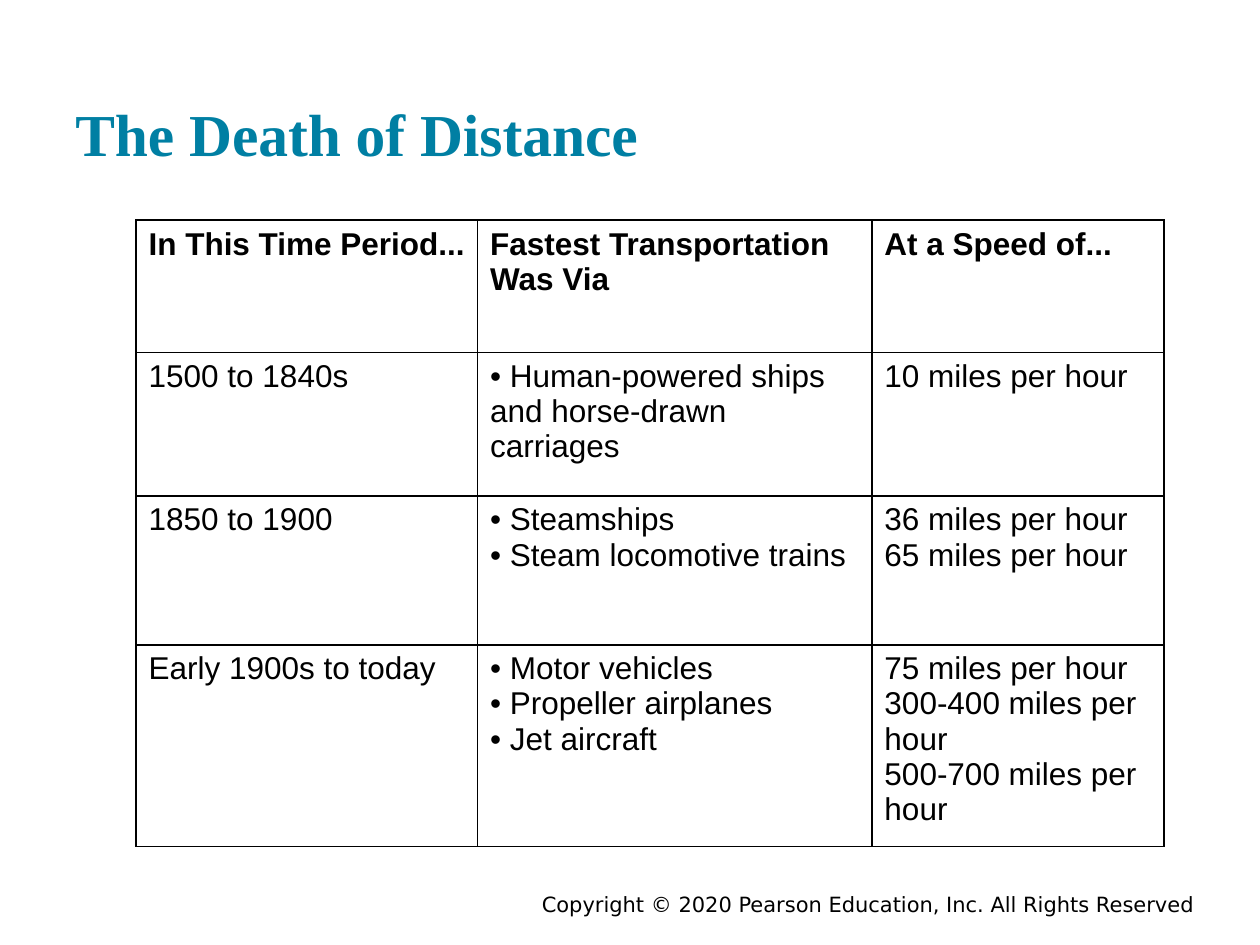
from dataclasses import dataclass

from lxml.etree import SubElement
from pptx import Presentation
from pptx.dml.color import RGBColor
from pptx.enum.text import MSO_ANCHOR, PP_ALIGN
from pptx.oxml.ns import qn
from pptx.util import Inches, Pt


@dataclass(frozen=True)
class Theme:
    """Colours, fonts and type sizes of the slide."""
    ink: str = "000000"
    accent: str = "007FA3"
    paper: str = "FFFFFF"
    title_font: str = "Times New Roman"
    body_font: str = "Arial"
    footer_font: str = "DejaVu Sans"
    title_size: int = 34
    body_size: int = 18
    footer_size: int = 12
    rule_width: int = 1


THEME = Theme()
WIDTH, HEIGHT = 10, 7.5
COLUMNS = (2.71, 3.13, 2.32)
ROWS = (1.05, 1.14, 1.18, 1.5)
ERAS = (
    (("In This Time Period...",), ("Fastest Transportation Was Via",), ("At a Speed of...",)),
    (("1500 to 1840s",), ("• Human-powered ships and horse-drawn carriages",),
     ("10 miles per hour",)),
    (("1850 to 1900",), ("• Steamships", "• Steam locomotive trains"),
     ("36 miles per hour", "65 miles per hour")),
    (("Early 1900s to today",),
     ("• Motor vehicles", "• Propeller airplanes", "• Jet aircraft"),
     ("75 miles per hour", "300-400 miles per hour", "500-700 miles per hour")),
)


def write(frame, lines, *, font=THEME.body_font, size=THEME.body_size,
          color=THEME.ink, bold=False, align=PP_ALIGN.LEFT):
    """Fill a text frame with one paragraph per line in a single format."""
    frame.word_wrap = True
    for index, line in enumerate(lines):
        paragraph = frame.paragraphs[0] if index == 0 else frame.add_paragraph()
        paragraph.alignment = align
        run = paragraph.add_run()
        run.text = line
        run.font.name = font
        run.font.size = Pt(size)
        run.font.bold = bold
        run.font.color.rgb = RGBColor.from_string(color)


def add_label(slide, line, left, top, width, height, *, inset=0.05,
              anchor=MSO_ANCHOR.TOP, **style):
    """Place a text box given as shares of the slide's size."""
    box = slide.shapes.add_textbox(Inches(left * WIDTH), Inches(top * HEIGHT),
                                   Inches(width * WIDTH), Inches(height * HEIGHT))
    frame = box.text_frame
    frame.vertical_anchor = anchor
    frame.margin_top = frame.margin_bottom = Inches(inset)
    write(frame, (line,), **style)


def rule_cell(cell):
    """Draw a thin rule on all four sides of a cell."""
    properties = cell._tc.get_or_add_tcPr()
    for side in ("lnL", "lnR", "lnT", "lnB"):
        rule = SubElement(properties, qn(f"a:{side}"), w=str(Pt(THEME.rule_width)))
        fill = SubElement(rule, qn("a:solidFill"))
        SubElement(fill, qn("a:srgbClr"), val=THEME.ink)


def add_era_table(slide, left, top):
    """Add the table of periods, transport and speeds."""
    table = slide.shapes.add_table(
        len(ROWS), len(COLUMNS), Inches(left * WIDTH), Inches(top * HEIGHT),
        Inches(sum(COLUMNS)), Inches(sum(ROWS))).table
    table.first_row = table.horz_banding = False
    for column, width in zip(table.columns, COLUMNS):
        column.width = Inches(width)
    for row_index, (row, height, era) in enumerate(zip(table.rows, ROWS, ERAS)):
        row.height = Inches(height)
        for cell, lines in zip(row.cells, era):
            rule_cell(cell)
            cell.fill.solid()
            cell.fill.fore_color.rgb = RGBColor.from_string(THEME.paper)
            write(cell.text_frame, lines, bold=row_index == 0)


def main():
    """Build and save the slide."""
    deck = Presentation()
    deck.slide_width, deck.slide_height = Inches(WIDTH), Inches(HEIGHT)
    slide = deck.slides.add_slide(deck.slide_layouts[6])
    add_label(slide, "Copyright © 2020 Pearson Education, Inc. All Rights Reserved",
              0.175, 0.937, 0.783, 0.03, font=THEME.footer_font,
              size=THEME.footer_size, align=PP_ALIGN.RIGHT)
    add_label(slide, "The Death of Distance", 0.05, 0.032, 0.9, 0.16, inset=0.1,
              anchor=MSO_ANCHOR.BOTTOM, font=THEME.title_font,
              size=THEME.title_size, color=THEME.accent, bold=True)
    add_era_table(slide, 0.108, 0.233)
    deck.save("out.pptx")


if __name__ == "__main__":
    main()
